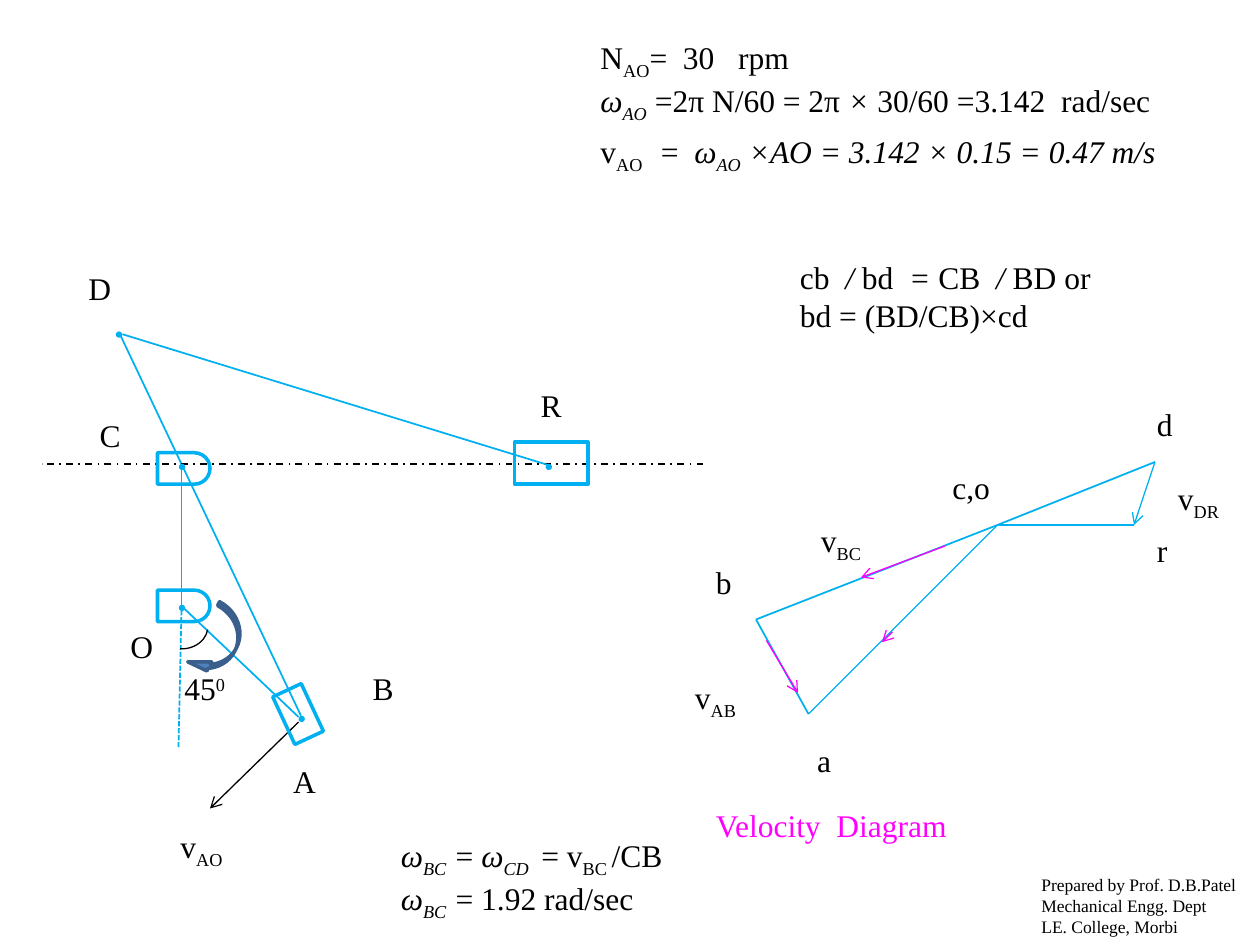
from lxml.etree import SubElement
from pptx import Presentation
from pptx.dml.color import RGBColor
from pptx.enum.dml import MSO_LINE
from pptx.enum.shapes import MSO_CONNECTOR, MSO_SHAPE
from pptx.enum.text import MSO_AUTO_SIZE, PP_ALIGN
from pptx.oxml.ns import qn
from pptx.util import Pt

CYAN, MAGENTA, BLACK = "00B0F0", "FF00FF", "000000"
BASELINES = {"_": "-25000", "^": "30000"}


def rgb(value):
    """Turn a hex string into a colour."""
    return RGBColor.from_string(value)


def add_line(s, start, end, color=CYAN, width=1, dash=None, arrow=False):
    """Draw a straight line, dashed or with an arrowhead on request."""
    line = s.shapes.add_connector(
        MSO_CONNECTOR.STRAIGHT, *(Pt(v) for v in (*start, *end)))
    line.line.color.rgb = rgb(color)
    line.line.width = Pt(width)
    if dash is not None:
        line.line.dash_style = dash
    if arrow:
        SubElement(line.line._get_or_add_ln(), qn("a:tailEnd"), type="arrow")
    SubElement(line._element.spPr, qn("a:effectLst"))


def add_shape(s, kind, box, fill=None, line=None, width=2, rotation=0, adj=()):
    """Draw a preset shape with optional fill and outline."""
    sp = s.shapes.add_shape(kind, *(Pt(v) for v in box))
    sp.shadow.inherit = False
    sp.rotation = rotation
    for i, value in enumerate(adj):
        sp.adjustments[i] = value
    if fill:
        sp.fill.solid()
        sp.fill.fore_color.rgb = rgb(fill)
    else:
        sp.fill.background()
    if line:
        sp.line.color.rgb = rgb(line)
        sp.line.width = Pt(width)
    else:
        sp.line.fill.background()
    return sp


def add_dot(s, x, y, size=3.6):
    """Mark a joint with a small disc centred on a point."""
    add_shape(s, MSO_SHAPE.OVAL, (x - size / 2, y - size / 2, size, size), fill=CYAN)


def add_text(s, box, paragraphs, size=18, color=BLACK, align=PP_ALIGN.LEFT, wrap=True):
    """Write paragraphs of (text, style) runs: i italic, _ subscript, ^ superscript."""
    tf = s.shapes.add_textbox(*(Pt(v) for v in box)).text_frame
    tf.word_wrap = wrap
    tf.auto_size = MSO_AUTO_SIZE.SHAPE_TO_FIT_TEXT
    for i, runs in enumerate(paragraphs):
        p = tf.paragraphs[0] if i == 0 else tf.add_paragraph()
        p.alignment = align
        for text, style in runs:
            r = p.add_run()
            r.text = text
            r.font.name = "Times New Roman"
            r.font.size = Pt(size)
            r.font.color.rgb = rgb(color)
            if "i" in style:
                r.font.italic = True
            for mark in style.replace("i", ""):
                r.font._element.set("baseline", BASELINES[mark])


def add_label(s, x, y, *runs, width=42):
    """Write a centred point label."""
    add_text(s, (x, y, width, 29), [runs], align=PP_ALIGN.CENTER)


def add_velocity(s, x, y, subscript):
    """Write a velocity symbol with its subscript."""
    add_text(s, (x, y, 41, 29), [[("v", ""), (subscript, "_")]], wrap=False)


def draw_mechanism(s):
    """Draw the linkage with its guides, sliders and joints."""
    add_line(s, (69, 192), (172, 409))
    add_line(s, (402, 265), (24, 265), BLACK, dash=MSO_LINE.DASH_DOT)
    add_line(s, (70, 191), (312.5, 265.5))
    add_line(s, (170.6, 409.7), (103.7, 346.3))
    add_line(s, (103.7, 345.6), (103.7, 268.6))
    add_line(s, (102, 427), (103.7, 349), dash=MSO_LINE.SQUARE_DOT)
    add_line(s, (170.6, 412.6), (120, 462), BLACK, 0.75, arrow=True)

    add_shape(s, MSO_SHAPE.RECTANGLE, (294, 252.7, 42, 24), line=CYAN)
    add_shape(s, MSO_SHAPE.RECTANGLE, (161.3, 393, 18, 30), line=CYAN, rotation=155)
    for y in (252.7, 331.2):
        add_shape(s, MSO_SHAPE.ROUND_2_SAME_RECTANGLE, (96, y, 18, 30),
                  line=CYAN, rotation=90, adj=(0.5, 0))
    add_shape(s, MSO_SHAPE.ARC, (90, 342, 26.6, 31), line=BLACK, width=0.75,
              rotation=94.7, adj=(164.353, 214.106))
    turn = add_shape(s, MSO_SHAPE.CURVED_RIGHT_ARROW, (114.5, 346.3, 20.9, 41.8),
                     fill="4F81BD", line="3A5F8C", rotation=27.9,
                     adj=(0.119, 0.281, 0.578))
    turn._element.spPr.xfrm.set("flipH", "1")

    for x, y in ((68, 191.2), (104, 266.8), (313.6, 266.8), (104, 347.4), (172.4, 410.8)):
        add_dot(s, x, y)
    for name, x, y in (("O", 60, 355), ("B", 198, 379), ("C", 42, 234),
                       ("D", 36, 150), ("R", 294, 217)):
        add_label(s, x, y, (name, ""))
    add_label(s, 156, 432, ("A", ""), width=36)
    add_label(s, 96, 379, ("45", ""), ("0", "^"))
    add_velocity(s, 96, 469, "AO")


def draw_velocity_diagram(s):
    """Draw the velocity polygon with its direction arrows and labels."""
    o, a, b, d, r = (570, 300), (462, 408), (432, 354), (660, 264), (648, 300)
    for start, end, width in ((o, a, 0.75), (b, a, 1), (o, b, 1), (o, d, 1), (r, o, 0.75)):
        add_line(s, start, end, width=width)
    add_line(s, d, r, width=0.75, arrow=True)
    for start, end in (((510, 361), (504, 367)), ((438, 366), (456, 396)),
                       ((540, 312), (492, 330))):
        add_line(s, start, end, MAGENTA, 0.75, arrow=True)

    add_label(s, 534, 264, ("c,o", ""))
    add_label(s, 450, 420, ("a", ""))
    for name, x, y in (("b", 402, 318), ("d", 654, 228), ("r", 654, 300)):
        add_text(s, (x, y, 23, 29), [[(name, "")]], wrap=False)
    for subscript, x, y in (("AB", 390, 384), ("BC", 462, 294), ("DR", 666, 270)):
        add_velocity(s, x, y, subscript)
    add_text(s, (402, 457, 148, 29), [[("Velocity  Diagram", "")]],
             color=MAGENTA, wrap=False)


def write_equations(s):
    """Write the calculations and the author lines."""
    add_text(s, (336, 18, 342, 51), [
        [("N", ""), ("AO", "_"), ("=  30   rpm", "")],
        [("ω", "i"), ("AO", "i_"), (" =2π N/60 = 2π ", ""), ("× ", "i"),
         ("30/60 =3.142  rad/sec", "")]])
    add_text(s, (336, 72, 350, 29), [
        [("v", ""), ("AO    ", "_"), ("=  ", ""), ("ω", "i"), ("AO", "i_"),
         (" ×AO = 3.142 × 0.15 = 0.47 m/s", "i")]], wrap=False)
    add_text(s, (450, 144, 183, 51), [
        [("cb ", ""), (" / ", "i"), ("bd", ""), ("  = ", "i"), ("CB ", ""),
         (" /", "i"), (" BD or", "")],
        [("bd = (BD/CB)×cd", "")]], wrap=False)
    add_text(s, (222, 474, 182, 51), [
        [("ω", "i"), ("BC  ", "i_"), ("= ", ""), ("ω", "i"), ("CD ", "i_"),
         (" = v", ""), ("BC ", "_"), ("/CB", "")],
        [("ω", "i"), ("BC  ", "i_"), ("= 1.92 rad/sec", "")]], wrap=False)
    credits = ("Prepared by Prof. D.B.Patel", "Mechanical Engg. Dept", "LE. College, Morbi")
    add_text(s, (588, 496, 132, 44), [[(line, "")] for line in credits], size=10)


def main():
    """Build the slide and save it."""
    prs = Presentation()
    prs.slide_width, prs.slide_height = Pt(720), Pt(540)
    s = prs.slides.add_slide(prs.slide_layouts[6])
    draw_mechanism(s)
    draw_velocity_diagram(s)
    write_equations(s)
    prs.save("out.pptx")


if __name__ == "__main__":
    main()
